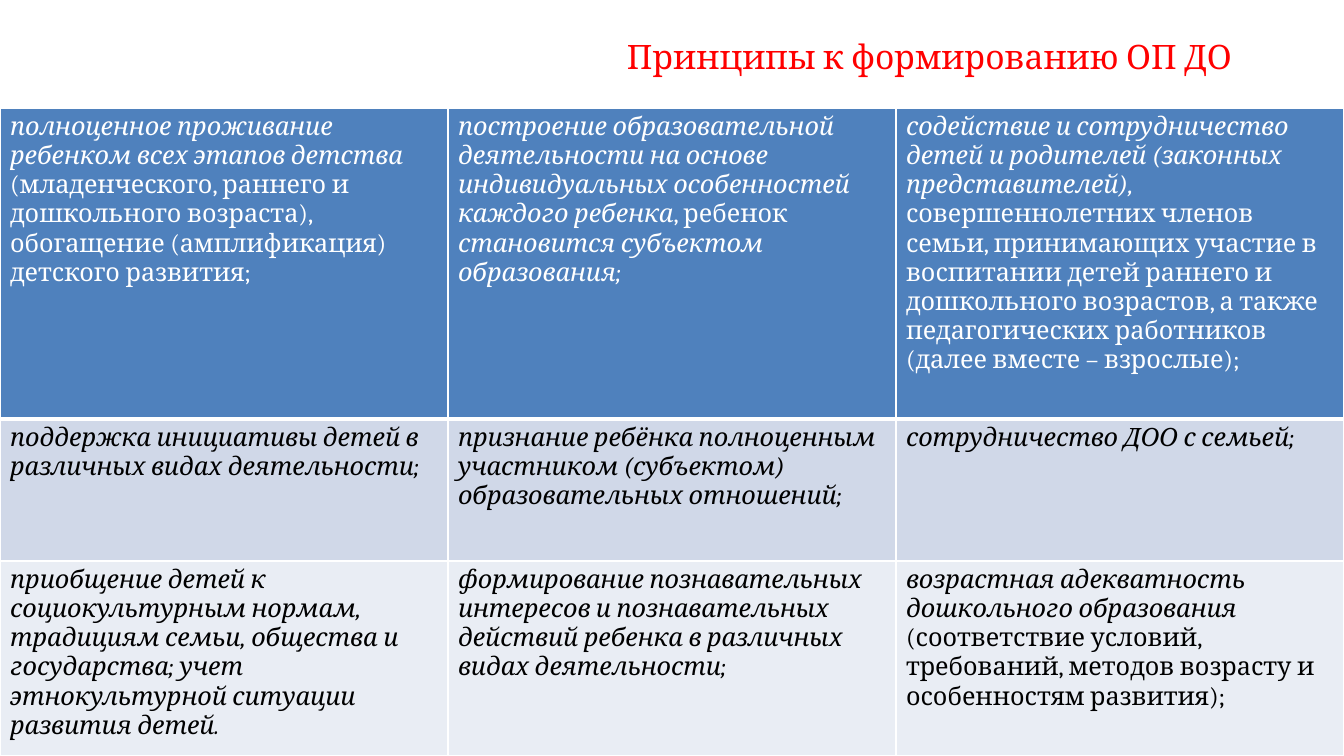
import dataclasses

import lxml.etree
import pptx
import pptx.dml.color
import pptx.enum.text
import pptx.oxml.ns
import pptx.util

SLIDE_WIDTH, SLIDE_HEIGHT = 1344, 756
EMU_PER_PX = 12192000 / SLIDE_WIDTH


@dataclasses.dataclass(frozen=True)
class Theme:
    font: str = "Cambria"
    title_size: int = 24
    cell_size: int = 18
    title: str = "FF0000"
    border: str = "FFFFFF"
    thin: int = 1
    thick: int = 3
    row_fills: tuple = ("4F81BD", "D0D8E8", "E9EDF4")
    row_texts: tuple = ("FFFFFF", "000000", "000000")


THEME = Theme()
TITLE = "Принципы к формированию ОП ДО"
ROW_HEIGHTS = (311, 142, 195)
TABLE_TOP = SLIDE_HEIGHT - sum(ROW_HEIGHTS)

# Each cell is a list of runs: (text, italic)
PRINCIPLES = [
    [
        [("полноценное проживание ребенком всех этапов детства ", True),
         ("(младенческого, раннего и дошкольного возраста), обогащение "
          "(амплификация) детского развития;", False)],
        [("построение образовательной деятельности на основе индивидуальных "
          "особенностей каждого ребенка", True),
         (", ребенок ", False),
         ("становится субъектом образования;", True)],
        [("содействие и сотрудничество детей и родителей (законных "
          "представителей),", True),
         (" совершеннолетних членов семьи, принимающих участие в воспитании "
          "детей раннего и дошкольного возрастов, а также педагогических "
          "работников (далее вместе – взрослые);", False)],
    ],
    [
        [("поддержка инициативы детей в различных видах деятельности;", True)],
        [("признание ребёнка полноценным участником (субъектом) "
          "образовательных отношений;", True)],
        [("сотрудничество ДОО с семьей;", True)],
    ],
    [
        [("приобщение детей к социокультурным нормам, традициям семьи, "
          "общества и государства; учет этнокультурной ситуации развития "
          "детей.", True)],
        [("формирование познавательных интересов и познавательных действий "
          "ребенка в различных видах деятельности;", True)],
        [("возрастная адекватность дошкольного образования", True),
         (" (соответствие условий, требований, методов возрасту и "
          "особенностям развития);", False)],
    ],
]


def px(length):
    return pptx.util.Emu(round(length * EMU_PER_PX))


def rgb(color):
    return pptx.dml.color.RGBColor.from_string(color)


def add_run(paragraph, text, size, color, italic=False):
    run = paragraph.add_run()
    run.text = text
    run.font.name = THEME.font
    run.font.size = pptx.util.Pt(size)
    run.font.bold = False
    run.font.italic = italic
    run.font.color.rgb = rgb(color)


def add_title(slide, left, top, width, height):
    box = slide.shapes.add_textbox(px(left), px(top), px(width), px(height))
    frame = box.text_frame
    frame.word_wrap = True
    frame.auto_size = pptx.enum.text.MSO_AUTO_SIZE.SHAPE_TO_FIT_TEXT
    add_run(frame.paragraphs[0], TITLE, THEME.title_size, THEME.title)


def set_borders(cell, top, bottom):
    properties = cell._tc.get_or_add_tcPr()
    qn = pptx.oxml.ns.qn
    widths = {"L": THEME.thin, "R": THEME.thin, "T": top, "B": bottom}
    for side, width in widths.items():
        line = lxml.etree.SubElement(
            properties, qn(f"a:ln{side}"), w=str(pptx.util.Pt(width)))
        fill = lxml.etree.SubElement(line, qn("a:solidFill"))
        lxml.etree.SubElement(fill, qn("a:srgbClr"), val=THEME.border)


def fill_cell(cell, runs, row_index):
    # A thick rule separates the first row from the second
    set_borders(cell,
                top=THEME.thick if row_index == 1 else THEME.thin,
                bottom=THEME.thick if row_index == 0 else THEME.thin)
    cell.fill.solid()
    cell.fill.fore_color.rgb = rgb(THEME.row_fills[row_index])
    paragraph = cell.text_frame.paragraphs[0]
    for text, italic in runs:
        add_run(paragraph, text, THEME.cell_size,
                THEME.row_texts[row_index], italic)


def add_principles_table(slide):
    column_count = len(PRINCIPLES[0])
    table = slide.shapes.add_table(
        len(PRINCIPLES), column_count, px(0), px(TABLE_TOP),
        px(SLIDE_WIDTH), px(sum(ROW_HEIGHTS))).table
    table.first_row = False
    table.horz_banding = False
    for column in table.columns:
        column.width = px(SLIDE_WIDTH / column_count)
    for row_index, cells in enumerate(PRINCIPLES):
        table.rows[row_index].height = px(ROW_HEIGHTS[row_index])
        for column_index, runs in enumerate(cells):
            fill_cell(table.cell(row_index, column_index), runs, row_index)


def main():
    presentation = pptx.Presentation()
    presentation.slide_width = px(SLIDE_WIDTH)
    presentation.slide_height = px(SLIDE_HEIGHT)
    slide = presentation.slides.add_slide(presentation.slide_layouts[6])

    # Heading above the table
    add_title(slide, left=617, top=31, width=672, height=50)

    # Full-width grid of principles
    add_principles_table(slide)

    presentation.save("out.pptx")


if __name__ == "__main__":
    main()
